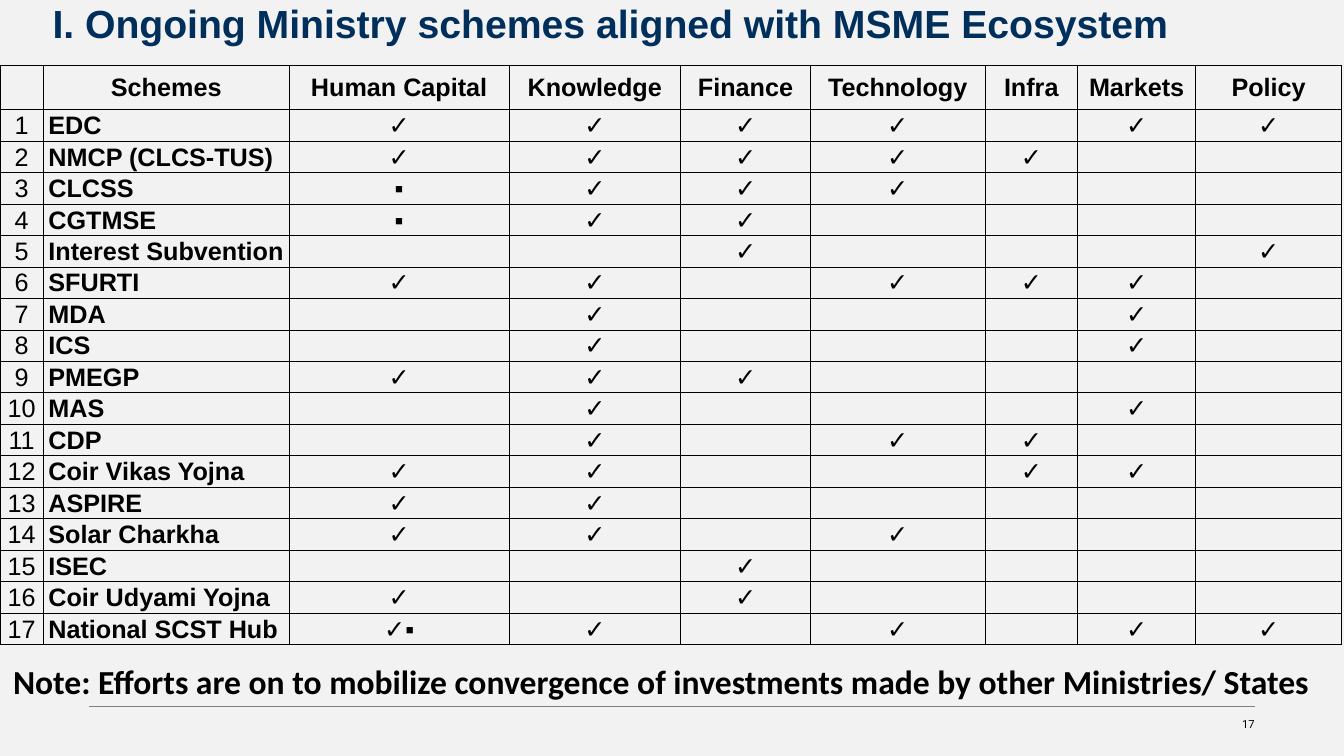
from lxml import etree
from pptx import Presentation
from pptx.dml.color import RGBColor
from pptx.enum import shapes, text
from pptx.oxml import ns
from pptx.util import Cm, Pt

NAVY = RGBColor(0x00, 0x2F, 0x5C)
BLACK = RGBColor(0x00, 0x00, 0x00)
GREY = RGBColor(0x80, 0x80, 0x80)
PALE = RGBColor(0xF2, 0xF2, 0xF2)

COLUMNS = [("", 1.09), ("Schemes", 6.2), ("Human Capital", 5.54),
           ("Knowledge", 4.32), ("Finance", 3.28), ("Technology", 4.39),
           ("Infra", 2.34), ("Markets", 2.97), ("Policy", 3.68)]
HEADER_HEIGHT, ROW_HEIGHT = 1.11, 0.79
SCHEMES = [
    ("EDC", "✓ ✓ ✓ ✓ - ✓ ✓"),
    ("NMCP (CLCS-TUS)", "✓ ✓ ✓ ✓ ✓ - -"),
    ("CLCSS", "▪ ✓ ✓ ✓ - - -"),
    ("CGTMSE", "▪ ✓ ✓ - - - -"),
    ("Interest Subvention", "- - ✓ - - - ✓"),
    ("SFURTI", "✓ ✓ - ✓ ✓ ✓ -"),
    ("MDA", "- ✓ - - - ✓ -"),
    ("ICS", "- ✓ - - - ✓ -"),
    ("PMEGP", "✓ ✓ ✓ - - - -"),
    ("MAS", "- ✓ - - - ✓ -"),
    ("CDP", "- ✓ - ✓ ✓ - -"),
    ("Coir Vikas Yojna", "✓ ✓ - - ✓ ✓ -"),
    ("ASPIRE", "✓ ✓ - - - - -"),
    ("Solar Charkha", "✓ ✓ - ✓ - - -"),
    ("ISEC", "- - ✓ - - - -"),
    ("Coir Udyami Yojna", "✓ - ✓ - - - -"),
    ("National SCST Hub", "✓▪ ✓ - ✓ - ✓ ✓"),
]


def style(font, name, size, color, bold):
    """Set the font, size, colour and weight of a run."""
    font.name, font.size, font.bold = name, Pt(size), bold
    font.color.rgb = color


def set_borders(cell, widths):
    """Give a cell black borders with a width in points for each side."""
    tc_pr = cell._tc.get_or_add_tcPr()
    for side, width in widths.items():
        ln = etree.SubElement(tc_pr, ns.qn(f"a:ln{side}"), w=str(Pt(width)))
        fill = etree.SubElement(ln, ns.qn("a:solidFill"))
        etree.SubElement(fill, ns.qn("a:srgbClr"), val=str(BLACK))


def add_title(s, left, top, width, height):
    """Place and format the title placeholder."""
    title = s.shapes.title
    title.left, title.top, title.width, title.height = left, top, width, height
    tf = title.text_frame
    tf.text = "I. Ongoing Ministry schemes aligned with MSME Ecosystem"
    tf.word_wrap = True
    tf.auto_size = text.MSO_AUTO_SIZE.NONE
    tf.vertical_anchor = text.MSO_ANCHOR.TOP
    p = tf.paragraphs[0]
    p.alignment, p.line_spacing = text.PP_ALIGN.LEFT, 0.9
    style(p.runs[0].font, "Arial", 28, NAVY, True)


def fill_cell(cell, value, bold, is_name):
    """Write one table cell without a fill."""
    cell.margin_left = Cm(0.13 if is_name else 0.03)
    cell.margin_top = cell.margin_right = Cm(0.03)
    cell.margin_bottom = 0
    cell.vertical_anchor = text.MSO_ANCHOR.MIDDLE
    cell.fill.background()
    cell.text_frame.text = value
    p = cell.text_frame.paragraphs[0]
    p.alignment = text.PP_ALIGN.LEFT if is_name else text.PP_ALIGN.CENTER
    for r in p.runs:
        style(r.font, "Arial", 18, BLACK, bold)


def add_scheme_table(s, left, top):
    """Build the matrix of schemes against ecosystem areas."""
    rows = [[name for name, _ in COLUMNS]]
    for number, (name, marks) in enumerate(SCHEMES, 1):
        rows.append([str(number), name] + marks.replace("-", "_").split())
    width = Cm(sum(w for _, w in COLUMNS))
    height = Cm(HEADER_HEIGHT + ROW_HEIGHT * len(SCHEMES))
    table = s.shapes.add_table(len(rows), len(COLUMNS), left, top, width, height).table
    table.first_row = table.horz_banding = False
    for column, (_, w) in zip(table.columns, COLUMNS):
        column.width = Cm(w)
    for i, values in enumerate(rows):
        table.rows[i].height = Cm(ROW_HEIGHT if i else HEADER_HEIGHT)
        for j, value in enumerate(values):
            cell = table.cell(i, j)
            set_borders(cell, {"L": 0.5 if j else 1, "R": 0.5, "T": 0.5 if i else 1,
                               "B": 1 if i == len(SCHEMES) else 0.5})
            fill_cell(cell, "" if value == "_" else value, i == 0 or j == 1,
                      i > 0 and j == 1)


def add_note(s, left, top, width, height):
    """Add the note below the table."""
    tf = s.shapes.add_textbox(left, top, width, height).text_frame
    tf.word_wrap = True
    tf.text = ("Note: Efforts are on to mobilize convergence of investments "
               "made by other Ministries/ States")
    style(tf.paragraphs[0].runs[0].font, "Calibri", 24, BLACK, True)


def add_footer(s, left, top, width):
    """Draw the footer rule and the slide number at its right end."""
    rule = s.shapes.add_connector(shapes.MSO_CONNECTOR.STRAIGHT,
                                  left, top, left + width, top)
    rule.line.color.rgb, rule.line.width = GREY, Pt(0.5)
    etree.SubElement(rule._element.spPr, ns.qn("a:effectLst"))
    box_width = Cm(1.4)
    tf = s.shapes.add_textbox(left + width - box_width, top + Cm(0.08),
                              box_width, Cm(0.79)).text_frame
    tf.word_wrap = True
    tf.margin_left = tf.margin_top = Cm(0.2)
    tf.margin_right = tf.margin_bottom = 0
    tf.text = "17"
    p = tf.paragraphs[0]
    p.alignment = text.PP_ALIGN.RIGHT
    style(p.runs[0].font, "Roboto", 8, BLACK, False)
    field = p.runs[0]._r
    field.tag = ns.qn("a:fld")
    field.set("id", "{B6F15528-21DE-4FAA-801E-634DDDAF4B2B}")
    field.set("type", "slidenum")


def main():
    """Build and save the slide."""
    prs = Presentation()
    prs.slide_width, prs.slide_height = Cm(33.87), Cm(19.05)
    prs.element.set("firstSlideNum", "17")
    s = prs.slides.add_slide(prs.slide_layouts[5])
    s.background.fill.solid()
    s.background.fill.fore_color.rgb = PALE
    add_footer(s, Cm(2.24), Cm(17.8), Cm(29.38))
    add_scheme_table(s, 0, Cm(1.65))
    add_title(s, Cm(1.07), 0, Cm(31.88), Cm(2.16))
    add_note(s, Cm(0.08), Cm(16.54), Cm(33.79), Cm(1.27))
    prs.save("out.pptx")


if __name__ == "__main__":
    main()
